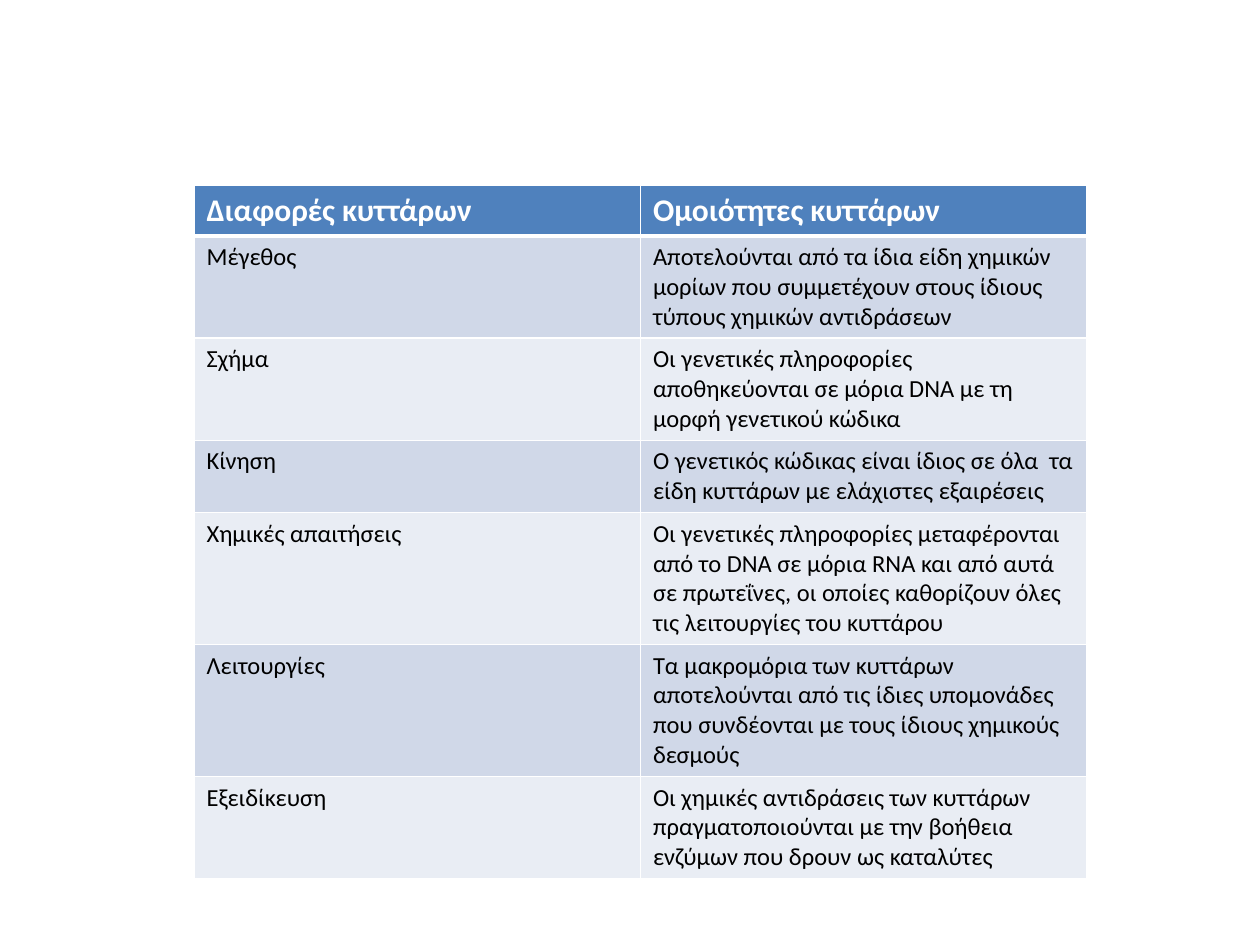
import pptx
import pptx.dml.color
import pptx.oxml
import pptx.oxml.ns
import pptx.util

Cm = pptx.util.Cm
Pt = pptx.util.Pt

COLOURS = {
    "header": "4F81BD",
    "odd": "D0D8E8",
    "even": "E9EDF4",
    "border": "FFFFFF",
    "header_text": "FFFFFF",
    "body_text": "000000",
}

CELL_ROWS = [
    ("Διαφορές κυττάρων", "Ομοιότητες κυττάρων"),
    ("Μέγεθος", "Αποτελούνται από τα ίδια είδη χημικών μορίων που συμμετέχουν στους ίδιους τύπους χημικών αντιδράσεων"),
    ("Σχήμα", "Οι γενετικές πληροφορίες αποθηκεύονται σε μόρια DNA με τη μορφή γενετικού κώδικα"),
    ("Κίνηση", "Ο γενετικός κώδικας είναι ίδιος σε όλα  τα είδη κυττάρων με ελάχιστες εξαιρέσεις"),
    ("Χημικές απαιτήσεις", "Οι γενετικές πληροφορίες μεταφέρονται από το DNA σε μόρια RNA και από αυτά σε πρωτεΐνες, οι οποίες καθορίζουν όλες τις λειτουργίες του κυττάρου"),
    ("Λειτουργίες", "Τα μακρομόρια των κυττάρων αποτελούνται από τις ίδιες υπομονάδες που συνδέονται με τους ίδιους χημικούς δεσμούς"),
    ("Εξειδίκευση", "Οι χημικές αντιδράσεις των κυττάρων πραγματοποιούνται με την βοήθεια ενζύμων που δρουν ως καταλύτες"),
]


def set_borders(cell, widths):
    """Draw the left, right, top and bottom borders in the given point widths."""
    properties = cell._tc.get_or_add_tcPr()
    for index, (side, width) in enumerate(zip("LRTB", widths)):
        line = pptx.oxml.parse_xml(
            f'<a:ln{side} {pptx.oxml.ns.nsdecls("a")} w="{Pt(width)}"><a:solidFill>'
            f'<a:srgbClr val="{COLOURS["border"]}"/></a:solidFill></a:ln{side}>'
        )
        properties.insert(index, line)


def format_cell(cell, text, row_index):
    """Fill one cell with its text, banded colour and borders."""
    is_header = row_index == 0
    band = "header" if is_header else ("even", "odd")[row_index % 2]
    cell.text_frame.text = text
    cell.fill.solid()
    cell.fill.fore_color.rgb = pptx.dml.color.RGBColor.from_string(COLOURS[band])
    span = cell.text_frame.paragraphs[0].runs[0]
    span.font.name = "Calibri"
    span.font.size = Pt(18 if is_header else 14)
    span.font.bold = is_header
    text_colour = COLOURS["header_text" if is_header else "body_text"]
    span.font.color.rgb = pptx.dml.color.RGBColor.from_string(text_colour)
    set_borders(cell, (1, 1, 3 if row_index == 1 else 1, 3 if is_header else 1))


def add_cell_comparison(page, left, top, width, row_height):
    """Place the table of differences and similarities between cells."""
    row_count, column_count = len(CELL_ROWS), len(CELL_ROWS[0])
    box = page.shapes.add_table(row_count, column_count, left, top, width, row_height * row_count)
    for row_index, texts in enumerate(CELL_ROWS):
        for column_index, text in enumerate(texts):
            format_cell(box.table.cell(row_index, column_index), text, row_index)


def main():
    """Build and save the deck."""
    deck = pptx.Presentation()
    deck.slide_width, deck.slide_height = Cm(25.4), Cm(19.05)
    page = deck.slides.add_slide(deck.slide_layouts.get_by_name("Blank"))
    add_cell_comparison(page, Cm(3.91), Cm(3.73), Cm(18), Cm(1.03))
    deck.save("out.pptx")


if __name__ == "__main__":
    main()
